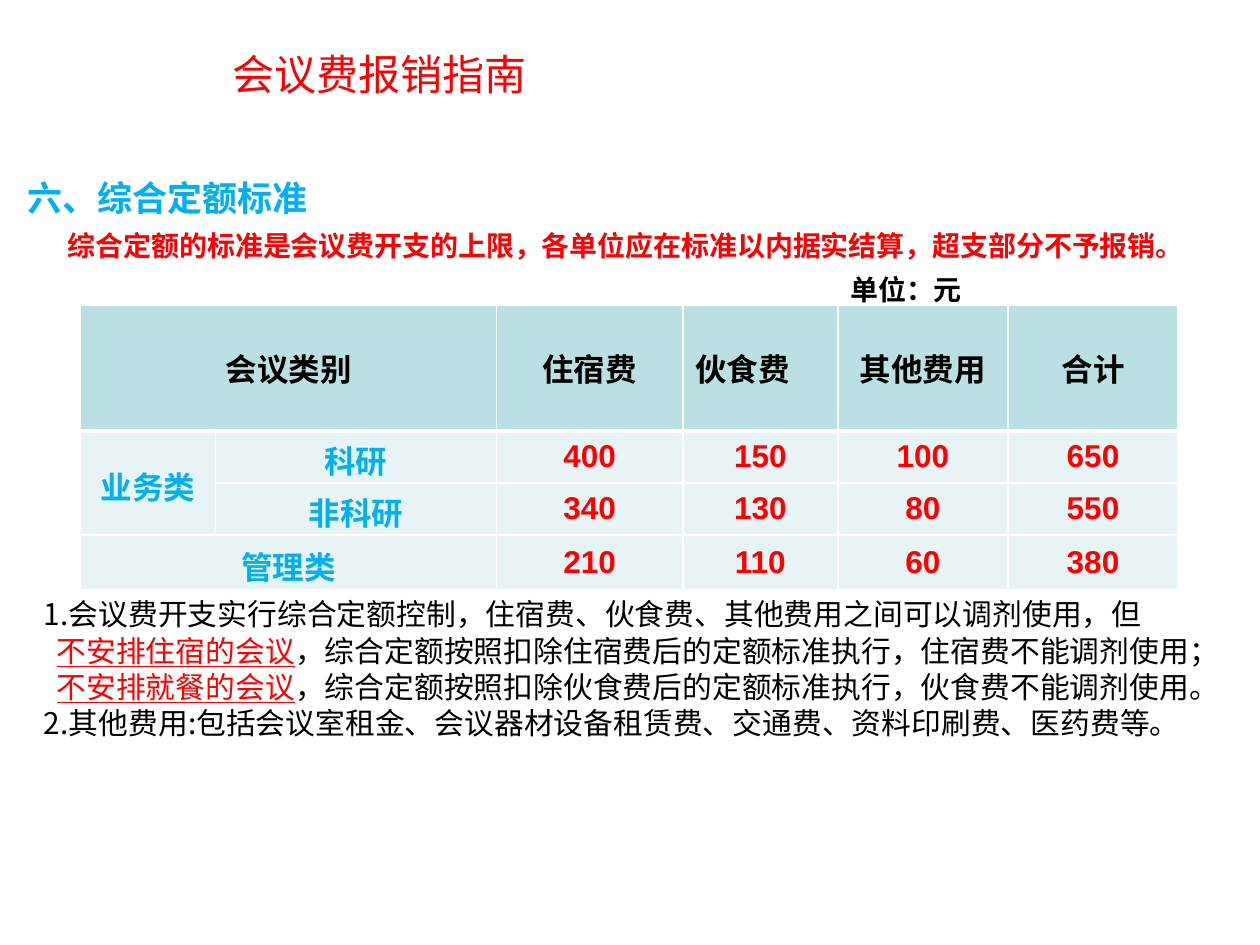
from dataclasses import dataclass, field

from lxml import etree
from pptx import Presentation
from pptx import util as u
from pptx.dml.color import RGBColor
from pptx.enum import text
from pptx.oxml import ns

RED = RGBColor(0xFF, 0x00, 0x00)
BLUE = RGBColor(0x00, 0xB0, 0xF0)
BLACK = RGBColor(0x00, 0x00, 0x00)
WHITE = RGBColor(0xFF, 0xFF, 0xFF)
TEAL = RGBColor(0xBB, 0xE0, 0xE3)
PALE_TEAL = RGBColor(0xE7, 0xF3, 0xF4)
LATIN_FONT, CHINESE_FONT = "Arial", "Noto Sans CJK SC"


@dataclass
class Span:
    words: str
    color: RGBColor = BLACK
    format: dict = field(default_factory=dict)


@dataclass
class Line:
    spans: list[Span]
    indent: float = 0


@dataclass
class TextBlock:
    left: float
    top: float
    width: float
    height: float
    spacing: float
    lines: list[Line]
    format: dict


def add_span(para, span: Span, shared: dict) -> None:
    run = para.add_run()
    run.text = span.words
    for name, value in {**shared, **span.format}.items():
        setattr(run.font, name, value)
    run.font.color.rgb = span.color
    east_asian = etree.SubElement(run.font._element, ns.qn("a:ea"))
    east_asian.set("typeface", CHINESE_FONT)


def draw_text(page, block: TextBlock) -> None:
    box = page.shapes.add_textbox(*map(u.Inches, (block.left, block.top, block.width, block.height)))
    frame = box.text_frame
    frame.word_wrap = True
    for index, line in enumerate(block.lines):
        para = frame.add_paragraph() if index else frame.paragraphs[0]
        para.line_spacing = u.Pt(block.spacing)
        para._p.get_or_add_pPr().set("marL", str(u.Inches(line.indent)))
        for span in line.spans:
            add_span(para, span, block.format)


def draw_borders(cell, widths: dict[str, float]) -> None:
    properties = cell._tc.get_or_add_tcPr()
    for side, width in widths.items():
        border = etree.SubElement(properties, ns.qn(f"a:ln{side}"), w=str(u.Pt(width)))
        fill = etree.SubElement(border, ns.qn("a:solidFill"))
        etree.SubElement(fill, ns.qn("a:srgbClr"), val=str(WHITE))


# Text around the table
BLOCKS = [
    TextBlock(0.12, 1.34, 9.77, 5.08, 25, [
        Line([Span("六、综合定额标准", BLUE, {"size": u.Pt(20)})]),
        Line([Span("综合定额的标准是会议费开支的上限，各单位应在标准以内据实结算，超支部分不予报销。", RED)], 0.32),
        Line([Span("单位：元")], 6.53),
    ], {"name": LATIN_FONT, "size": u.Pt(16), "bold": True}),
    TextBlock(1.75, 0.33, 5.5, 0.55, 29, [Line([Span("会议费报销指南", RED)])],
              {"name": CHINESE_FONT, "size": u.Pt(24)}),
    TextBlock(0.25, 4.68, 9.61, 3.55, 20.6, [
        Line([Span("1.会议费开支实行综合定额控制，住宿费、伙食费、其他费用之间可以调剂使用，但")]),
        Line([Span("不安排住宿的会议", RED, {"underline": True}),
              Span("，综合定额按照扣除住宿费后的定额标准执行，住宿费不能调剂使用；")], 0.1),
        Line([Span("不安排就餐的会议", RED, {"underline": True}),
              Span("，综合定额按照扣除伙食费后的定额标准执行，伙食费不能调剂使用。")], 0.1),
        Line([Span("2.其他费用:包括会议室租金、会议器材设备租赁费、交通费、资料印刷费、医药费等。")]),
    ], {"name": CHINESE_FONT, "size": u.Pt(17)}),
]

# Quota table
ROWS = [
    ["会议类别", "", "住宿费", "伙食费", "其他费用", "合计"],
    ["业务类", "科研", "400", "150", "100", "650"],
    ["", "非科研", "340", "130", "80", "550"],
    ["管理类", "", "210", "110", "60", "380"],
]
COLUMN_WIDTHS = [1.07, 2.23, 1.48, 1.23, 1.35, 1.35]
ROW_HEIGHTS = [1.0, 0.41, 0.41, 0.44]
MERGES = [((0, 0), (0, 1)), ((1, 0), (2, 0)), ((3, 0), (3, 1))]
CELL_FONT = {"name": LATIN_FONT, "size": u.Pt(18), "bold": True}


def fill_cell(cell, row: int, column: int, words: str) -> None:
    draw_borders(cell, {"L": 1, "R": 1, "T": 3 if row == 1 else 1, "B": 1 if row else 3})
    cell.fill.solid()
    cell.fill.fore_color.rgb = PALE_TEAL if row else TEAL
    cell.vertical_anchor = text.MSO_ANCHOR.MIDDLE
    cell.margin_top = u.Inches(0.05)
    # Chinese lines are taller than digits, so row labels sit without a bottom margin
    cell.margin_bottom = u.Inches(0 if row and column < 2 else 0.05)
    if not words:
        return
    para = cell.text_frame.paragraphs[0]
    left_aligned = (row, column) == (0, 3)
    para.alignment = text.PP_ALIGN.LEFT if left_aligned else text.PP_ALIGN.CENTER
    color = BLACK if row == 0 else BLUE if column < 2 else RED
    add_span(para, Span(words, color), CELL_FONT)


def draw_table(page) -> None:
    table = page.shapes.add_table(
        len(ROWS), len(COLUMN_WIDTHS), u.Inches(0.64), u.Inches(2.42),
        u.Inches(sum(COLUMN_WIDTHS)), u.Inches(sum(ROW_HEIGHTS))).table
    for column, width in zip(table.columns, COLUMN_WIDTHS):
        column.width = u.Inches(width)
    for row, height in zip(table.rows, ROW_HEIGHTS):
        row.height = u.Inches(height)
    for start, end in MERGES:
        table.cell(*start).merge(table.cell(*end))
    for row, values in enumerate(ROWS):
        for column, words in enumerate(values):
            fill_cell(table.cell(row, column), row, column, words)


def main() -> None:
    deck = Presentation()
    deck.slide_width, deck.slide_height = u.Inches(10), u.Inches(7.5)
    page = deck.slides.add_slide(deck.slide_layouts[6])
    # The table lies beneath the text so that it never covers the unit label
    draw_table(page)
    for block in BLOCKS:
        draw_text(page, block)
    deck.save("out.pptx")


if __name__ == "__main__":
    main()
